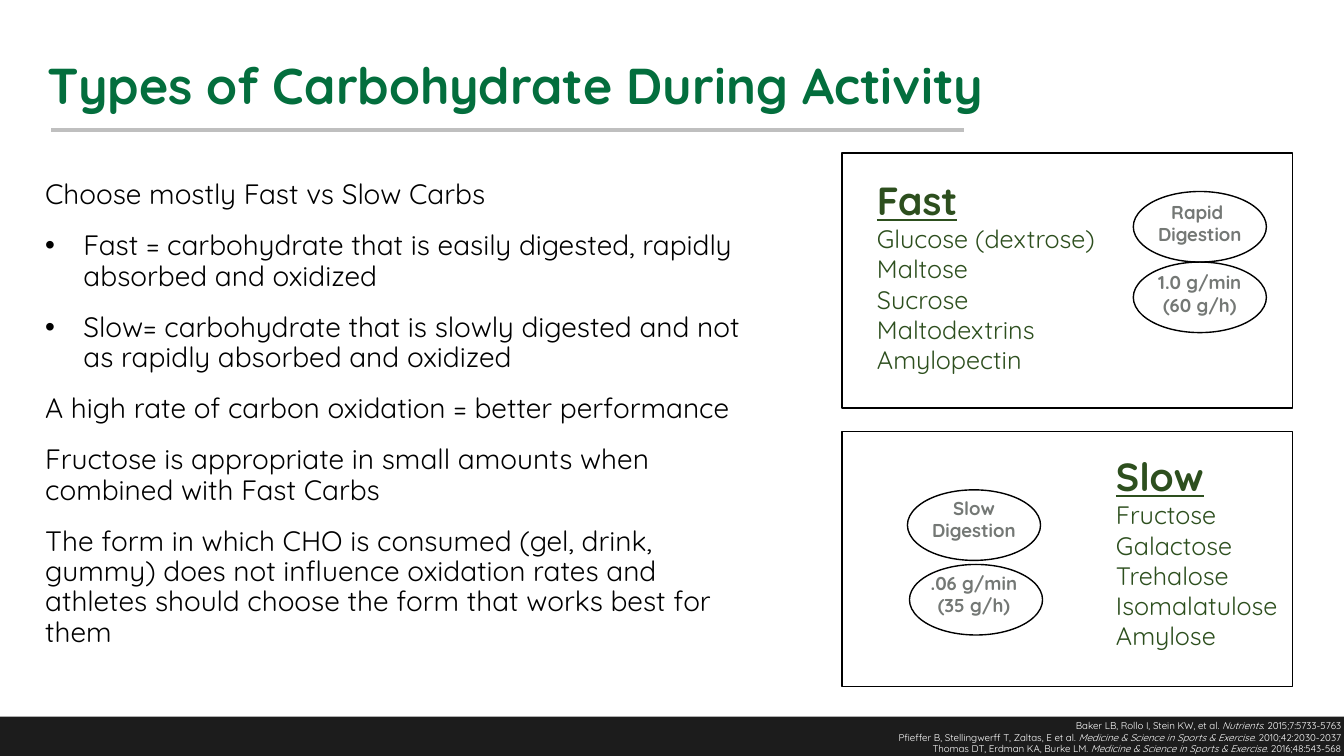
from lxml.etree import SubElement as Sub
from pptx import Presentation
from pptx.dml.color import RGBColor
from pptx.enum.shapes import MSO_CONNECTOR as Link, MSO_SHAPE as Kind
from pptx.enum.text import MSO_AUTO_SIZE as Auto, PP_ALIGN as Align
from pptx.oxml.ns import qn
from pptx.util import Inches, Pt


def shade(code):
    return RGBColor.from_string(code)


class Deck:
    font = "Quicksand"
    green = "036E3D"
    leaf = "2D4F1E"
    gray = "747875"
    black = "000000"
    white = "FFFFFF"

    def __init__(self):
        self.show = Presentation()
        self.show.slide_width = Inches(13.33)
        self.show.slide_height = Inches(7.5)
        self.slide = self.show.slides.add_slide(self.show.slide_layouts[6])

    def box(self, left, top, width, height, side=0.1, edge=0.05, grow=True):
        area = self.slide.shapes.add_textbox(
            Inches(left), Inches(top), Inches(width), Inches(height))
        frame = area.text_frame
        frame.word_wrap = True
        frame.auto_size = Auto.SHAPE_TO_FIT_TEXT if grow else Auto.NONE
        frame.margin_left = frame.margin_right = Inches(side)
        frame.margin_top = frame.margin_bottom = Inches(edge)
        return frame

    def text(self, frame, words, size=18, color=black, bold=False, line=False,
             align=Align.LEFT, space=None, gaps=None, dot=False):
        para = frame.paragraphs[0]
        if para.runs:
            para = frame.add_paragraph()
        para.alignment = align
        if space:
            para.line_spacing = space
        if gaps:
            para.space_before, para.space_after = map(Pt, gaps)
        if dot:
            props = para._p.get_or_add_pPr()
            props.set("marL", str(Inches(0.38)))
            props.set("indent", str(-Inches(0.38)))
            Sub(props, qn("a:buFont")).set("typeface", "Arial")
            Sub(props, qn("a:buChar")).set("char", "•")
        parts = [words] if isinstance(words, str) else words
        for spot, part in enumerate(parts):
            run = para.add_run()
            run.text = part
            font = run.font
            font.name = self.font
            font.size = Pt(size)
            font.bold = bold
            font.italic = spot % 2 == 1
            font.underline = line
            font.color.rgb = shade(color)

    def shape(self, kind, left, top, width, height, fill=None, line=None):
        form = self.slide.shapes.add_shape(
            kind, Inches(left), Inches(top), Inches(width), Inches(height))
        form.shadow.inherit = False
        if fill:
            form.fill.solid()
            form.fill.fore_color.rgb = shade(fill)
        else:
            form.fill.background()
        if line:
            form.line.color.rgb = shade(line)
            form.line.width = Pt(1)
        else:
            form.line.fill.background()

    def rule(self, left, top, right, color, width):
        line = self.slide.shapes.add_connector(
            Link.STRAIGHT, Inches(left), Inches(top), Inches(right), Inches(top))
        line.line.color.rgb = shade(color)
        line.line.width = Pt(width)
        Sub(line._element.spPr, qn("a:effectLst"))

    def panel(self, top):
        self.shape(Kind.RECTANGLE, 8.35, top, 4.47, 2.53, line=self.black)

    def sugars(self, left, top, width, head, names):
        frame = self.box(left, top, width, 2.09)
        self.text(frame, head, size=28, color=self.leaf, bold=True, line=True)
        for name in names:
            self.text(frame, name, color=self.leaf)

    def oval(self, left, top, lines, right=0, down=0):
        frame = self.box(left, top, 1.32, 0.64, side=0.19, edge=0.09)
        for words in lines:
            self.text(frame, words, size=13.3, color=self.gray, bold=True,
                      align=Align.CENTER)
        self.shape(Kind.OVAL, left + right, top + down, 1.32, 0.7,
                   line=self.black)


def main():
    deck = Deck()
    deck.shape(Kind.RECTANGLE, 0, 7.11, 13.33, 0.39, fill="1C1C1C")

    title = deck.box(0.37, 0.6, 11.47, 0.93, grow=False)
    deck.text(title, "Types of Carbohydrate During Activity", size=36,
              color=deck.green, bold=True, space=0.8)
    deck.rule(0.51, 1.29, 9.56, "BFBFBF", 3)

    body = deck.box(0.35, 1.74, 7.13, 4.62, grow=False)
    points = [
        ("Choose mostly Fast vs Slow Carbs", False),
        ("Fast = carbohydrate that is easily digested, rapidly absorbed "
         "and oxidized", True),
        ("Slow= carbohydrate that is slowly digested and not as rapidly "
         "absorbed and oxidized", True),
        ("A high rate of carbon oxidation = better performance", False),
        ("Fructose is appropriate in small amounts when combined with "
         "Fast Carbs", False),
        ("The form in which CHO is consumed (gel, drink, gummy) does not "
         "influence oxidation rates and athletes should choose the form "
         "that works best for them", False),
    ]
    for words, dot in points:
        deck.text(body, words, size=20, space=0.9, gaps=(10, 5), dot=dot)

    deck.panel(1.52)
    deck.sugars(8.6, 1.7, 2.54, "Fast", [
        "Glucose (dextrose)", "Maltose", "Sucrose", "Maltodextrins",
        "Amylopectin"])
    deck.oval(11.24, 1.9, ["Rapid ", "Digestion"])
    deck.oval(11.24, 2.6, ["1.0 g/min", "(60 g/h)"])

    deck.panel(4.28)
    deck.sugars(10.97, 4.44, 1.85, "Slow", [
        "Fructose", "Galactose", "Trehalose", "Isomalatulose", "Amylose"])
    deck.oval(9, 4.84, ["Slow", "Digestion"], down=0.02)
    deck.oval(9, 5.58, [".06 g/min", "(35 g/h)"], right=0.02, down=0.02)

    notes = deck.box(5.46, 7.09, 7.94, 0.45)
    sport = "Medicine & Science in Sports & Exercise"
    for cite in [
        ("Baker LB, Rollo I, Stein KW, et al. ", "Nutrients",
         ". 2015;7:5733-5763"),
        ("Pfieffer B, Stellingwerff T, Zaltas, E et al. ", sport,
         ". 2010;42:2030-2037"),
        ("Thomas DT, Erdman KA, Burke LM. ", sport, ". 2016;48:543-568"),
    ]:
        deck.text(notes, cite, size=7, color=deck.white, align=Align.RIGHT)

    deck.show.save("out.pptx")


if __name__ == "__main__":
    main()
